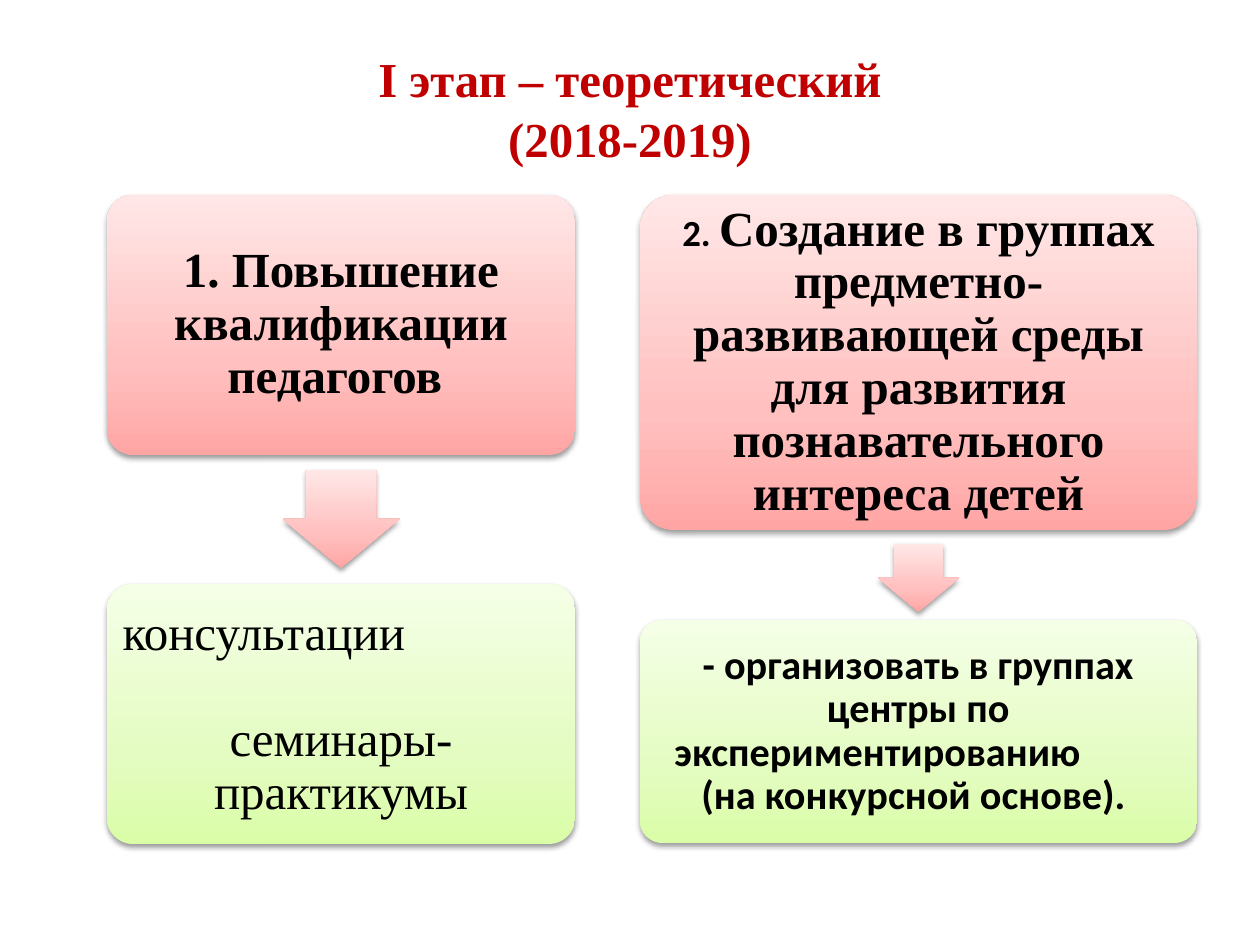
from dataclasses import dataclass

from pptx import Presentation
from pptx import util as u
from pptx.dml.color import RGBColor
from pptx.enum import shapes, text
from pptx.oxml import parse_xml

PX = 914400 / 126
NS = 'xmlns:a="http://schemas.openxmlformats.org/drawingml/2006/main"'
SERIF, SANS = "Times New Roman", "Calibri"
COLORS = {"title": "C00000", "text": "000000", "shadow": "000000"}
GRADIENTS = {
    "pink": {0: "FFA6A5", 35: "FFC0BF", 100: "FFE7E7"},
    "green": {0: "DAFDA7", 35: "E4FCC2", 100: "F5FFE7"},
}
CENTER, LEFT = text.PP_ALIGN.CENTER, text.PP_ALIGN.LEFT


@dataclass
class Span:
    words: str
    size: float = 28
    name: str = SERIF
    bold: bool = True
    color: str = "text"


@dataclass
class Para:
    spans: list[Span]
    align: int = CENTER
    spacing: object = 0.9
    before: int = 0
    indent: int = 0


@dataclass
class Card:
    top: int
    height: int
    gradient: str
    margin: int
    paras: list[Para]


@dataclass
class Column:
    left: int
    width: int
    arrow: tuple[int, int, int]  # top, width, height
    cards: list[Card]


def px(value: float) -> u.Emu:
    return u.Emu(round(value * PX))


def write(frame, paras: list[Para], margins: tuple[int, int, int, int]) -> None:
    left, top, right, bottom = map(px, margins)
    settings = {
        "word_wrap": True, "auto_size": text.MSO_AUTO_SIZE.NONE,
        "vertical_anchor": text.MSO_ANCHOR.MIDDLE,
        "margin_left": left, "margin_top": top,
        "margin_right": right, "margin_bottom": bottom,
    }
    for key, value in settings.items():
        setattr(frame, key, value)
    for index, item in enumerate(paras):
        para = frame.add_paragraph() if index else frame.paragraphs[0]
        para.alignment = item.align
        para.line_spacing = item.spacing
        para.space_before = u.Pt(item.before)
        if item.indent:
            para._p.get_or_add_pPr().set("marL", str(px(item.indent)))
        for span in item.spans:
            run = para.add_run()
            run.text = span.words
            formats = {"name": span.name, "size": u.Pt(span.size), "bold": span.bold}
            for key, value in formats.items():
                setattr(run.font, key, value)
            run.font.color.rgb = RGBColor.from_string(COLORS[span.color])


def add_block(page, kind, place: tuple, gradient: str, adjust: tuple):
    """Add a shape with a vertical gradient and a soft shadow."""
    shape = page.shapes.add_shape(kind, *map(px, place))
    for index, value in enumerate(adjust):
        shape.adjustments[index] = value
    shape.line.fill.background()
    stops = "".join(
        f'<a:gs pos="{pos * 1000}"><a:srgbClr val="{color}"/></a:gs>'
        for pos, color in GRADIENTS[gradient].items())
    properties = shape._element.spPr
    properties.insert(2, parse_xml(
        f'<a:gradFill {NS} rotWithShape="1"><a:gsLst>{stops}</a:gsLst>'
        '<a:lin ang="16200000" scaled="0"/></a:gradFill>'))
    properties.append(parse_xml(
        f'<a:effectLst {NS}><a:outerShdw blurRad="{u.Pt(3.1)}" dist="{u.Pt(1.6)}" '
        f'dir="5400000" rotWithShape="0"><a:srgbClr val="{COLORS["shadow"]}">'
        '<a:alpha val="38000"/></a:srgbClr></a:outerShdw></a:effectLst>'))
    return shape


def add_column(page, column: Column) -> None:
    for card in column.cards:
        place = (column.left, card.top, column.width, card.height)
        box = add_block(page, shapes.MSO_SHAPE.ROUNDED_RECTANGLE, place,
                        card.gradient, (0.1,))
        write(box.text_frame, card.paras, (card.margin,) * 4)
    top, width, height = column.arrow
    left = column.left + (column.width - width) / 2
    add_block(page, shapes.MSO_SHAPE.DOWN_ARROW, (left, top, width, height),
              "pink", (0.6, 0.5))


def note(words: str) -> list[Span]:
    return [Span(words, 23, SANS)]


COLUMNS = [
    Column(107, 468, (470, 117, 98), [
        Card(195, 260, "pink", 8, [
            Para([Span("1. Повышение квалификации педагогов ")])]),
        Card(584, 260, "green", 8, [
            Para([Span("консультации", bold=False)], LEFT),
            Para([Span("семинары-практикумы", bold=False)], before=30)]),
    ]),
    Column(640, 557, (544, 81, 68), [
        Card(195, 335, "pink", 2, [
            Para([Span("2. ", 21, SANS),
                  Span("Создание в группах предметно-развивающей среды "
                       "для развития познавательного интереса детей")])]),
        Card(620, 223, "green", 6, [
            Para(note("- организовать в группах центры по")),
            Para(note("экспериментированию"), LEFT, indent=22),
            Para(note("(на конкурсной основе). "))]),
    ]),
]


def main() -> None:
    deck = Presentation()
    deck.slide_width, deck.slide_height = px(1260), px(945)
    page = deck.slides.add_slide(deck.slide_layouts[5])

    # Title
    title = page.shapes.title
    for key, value in zip(("left", "top", "width", "height"), (63, 38, 1134, 157)):
        setattr(title, key, px(value))
    lines = ("I этап – теоретический", "(2018-2019)")
    write(title.text_frame,
          [Para([Span(line, 27.9, color="title")], spacing=u.Pt(34)) for line in lines],
          (12, 6, 12, 24))

    # Two columns of cards joined by arrows
    for column in COLUMNS:
        add_column(page, column)

    deck.save("out.pptx")


if __name__ == "__main__":
    main()
